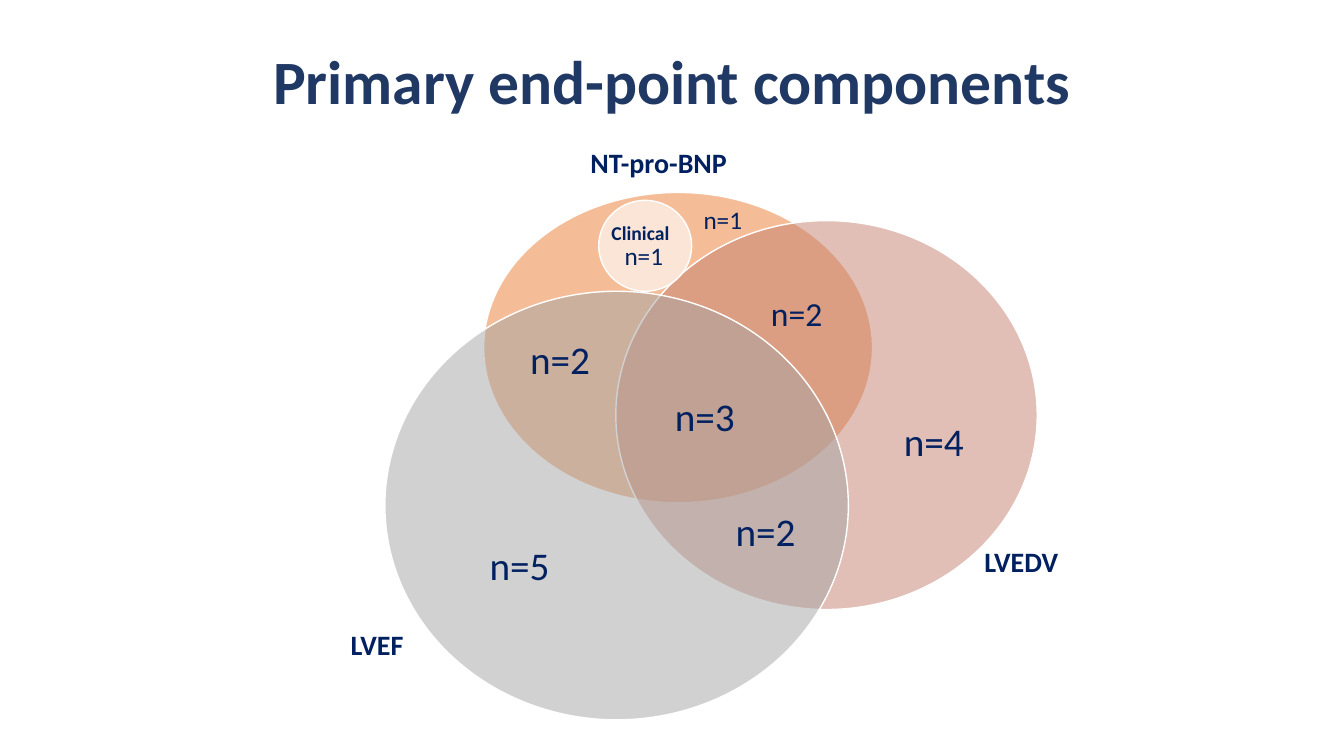
"""Build the slide with the overlapping primary end-point components."""
from dataclasses import dataclass

from lxml.etree import SubElement as Sub
from pptx import Presentation as Deck
from pptx.dml.color import RGBColor as Rgb
from pptx.enum.shapes import MSO_SHAPE as Kind
from pptx.enum.text import MSO_ANCHOR as Anchor, MSO_AUTO_SIZE as Fit, PP_ALIGN as Align
from pptx.oxml.ns import qn
from pptx.shapes.shapetree import GroupShapes as Group, SlideShapes as Shapes
from pptx.util import Cm, Pt


@dataclass(frozen=True)
class Theme:
    font: str = "Calibri"
    title: str = "203864"
    ink: str = "002060"
    edge: str = "FFFFFF"
    orange: str = "ED7D31"
    rose: str = "C48170"
    gray: str = "A5A5A5"
    peach: str = "FBE5D6"
    head: int = 44
    large: int = 28
    mid: int = 24
    label: int = 20
    small: int = 18
    tiny: int = 14


@dataclass(frozen=True)
class Oval:
    left: float
    top: float
    width: float
    height: float
    color: str
    alpha: int = 50


@dataclass(frozen=True)
class Note:
    text: str
    left: float
    top: float
    width: float = 2.08
    height: float = 1.45
    size: int = Theme.large
    bold: bool = False


THEME = Theme()
SETS = [
    Oval(12.19, 4.85, 9.8, 7.82, THEME.orange),
    Oval(15.52, 5.56, 10.62, 9.8, THEME.rose),
    Oval(9.7, 7.34, 11.68, 10.8, THEME.gray),
]
COUNTS = [
    Note("n=2", 19.18, 7.26, 1.85, 1.27, THEME.mid),
    Note("n=2", 13.11, 8.33),
    Note("n=2", 18.29, 12.67),
    Note("n=3", 16.76, 9.75),
    Note("n=1", 17.48, 5.03, 1.52, 1.02, THEME.small),
    Note("n=5", 12.09, 13.51),
    Note("n=4", 22.53, 10.39),
]
NAMES = [
    Note("NT-pro-BNP", 14.63, 3.53, 4.04, 1.12, THEME.label, True),
    Note("LVEDV", 24.56, 13.59, 2.39, 1.12, THEME.label, True),
    Note("LVEF", 8.59, 15.7, 1.85, 1.12, THEME.label, True),
]
CLINIC = Oval(15.09, 5.05, 2.34, 2.29, THEME.peach, 100)
INNER = [
    Note("n=1", 15.49, 5.94, 1.6, 1.02, THEME.small),
    Note("Clinical", 15.16, 5.44, 1.98, 0.86, THEME.tiny, True),
]


def add_oval(group: Group, oval: Oval) -> None:
    """Draw one set as an ellipse with a thin edge."""
    shape = group.add_shape(Kind.OVAL, Cm(oval.left), Cm(oval.top), Cm(oval.width), Cm(oval.height))
    shape.shadow.inherit = False
    shape.fill.solid()
    shape.fill.fore_color.rgb = Rgb.from_string(oval.color)
    shape.line.color.rgb = Rgb.from_string(THEME.edge)
    shape.line.width = Pt(1)
    if oval.alpha < 100:
        color = shape.element.spPr.find(f"{qn('a:solidFill')}/{qn('a:srgbClr')}")
        Sub(color, qn("a:alpha"), val=str(oval.alpha * 1000))


def add_note(group: Group, note: Note) -> None:
    """Write one count or set name."""
    box = group.add_textbox(Cm(note.left), Cm(note.top), Cm(note.width), Cm(note.height))
    frame = box.text_frame
    frame.word_wrap = False
    frame.auto_size = Fit.SHAPE_TO_FIT_TEXT
    frame.text = note.text
    font = frame.paragraphs[0].font
    font.name, font.size, font.bold = THEME.font, Pt(note.size), note.bold
    font.color.rgb = Rgb.from_string(THEME.ink)


def add_title(shapes: Shapes, text: str) -> None:
    """Write the centred slide title."""
    frame = shapes.add_textbox(Cm(2.34), Cm(0.28), Cm(29.21), Cm(3.68)).text_frame
    frame.word_wrap = True
    frame.vertical_anchor = Anchor.MIDDLE
    frame.text = text
    line = frame.paragraphs[0]
    line.alignment = Align.CENTER
    line.line_spacing = 0.9
    line.font.name, line.font.size, line.font.bold = THEME.font, Pt(THEME.head), True
    line.font.color.rgb = Rgb.from_string(THEME.title)


def main() -> None:
    """Build and save the deck."""
    deck = Deck()
    deck.slide_width, deck.slide_height = Cm(33.87), Cm(19.05)
    slide = deck.slides.add_slide(deck.slide_layouts[6])
    add_title(slide.shapes, "Primary end-point components")
    group = slide.shapes.add_group_shape().shapes
    for oval in SETS:
        add_oval(group, oval)
    for note in COUNTS + NAMES:
        add_note(group, note)
    add_oval(group, CLINIC)
    for note in INNER:
        add_note(group, note)
    deck.save("out.pptx")


if __name__ == "__main__":
    main()
